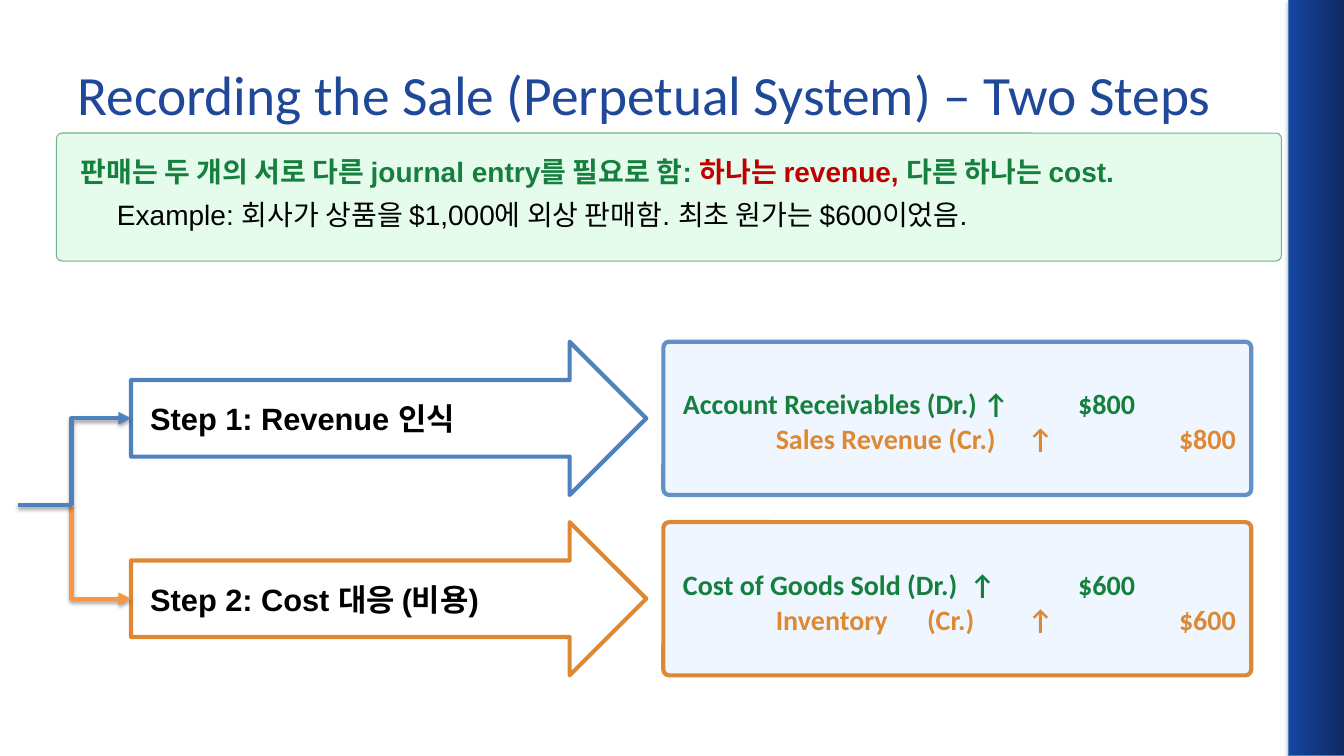
from pptx import Presentation
from pptx.dml.color import RGBColor
from pptx.enum import shapes, text
from pptx.oxml import parse_xml
from pptx.oxml import ns
from pptx.util import Inches, Pt

NAVY = RGBColor(0x0D, 0x29, 0x60)
ROYAL = RGBColor(0x16, 0x45, 0xA2)
TITLE_BLUE = RGBColor(0x1F, 0x48, 0x99)
BAND_EDGE = RGBColor(0x4B, 0x7E, 0xBC)
BLUE = RGBColor(0x4F, 0x81, 0xBD)
SOFT_BLUE = RGBColor(0x64, 0x90, 0xC5)
PALE_BLUE = RGBColor(0xEF, 0xF6, 0xFF)
ORANGE = RGBColor(0xDD, 0x89, 0x33)
BRIGHT_ORANGE = RGBColor(0xF7, 0x96, 0x46)
GREEN = RGBColor(0x15, 0x80, 0x3D)
MINT = RGBColor(0xE5, 0xFC, 0xED)
MINT_EDGE = RGBColor(0x6D, 0xB5, 0x87)
RED = RGBColor(0xC0, 0x00, 0x00)
BLACK = RGBColor(0, 0, 0)
WHITE = RGBColor(0xFF, 0xFF, 0xFF)

PRESET = shapes.MSO_SHAPE
LINK = shapes.MSO_CONNECTOR
STEP_HEIGHT = 1.52
FORK_X, FORK_Y = 0.71, 5.01
STEP_X = 1.3


def add_shadow(element, opacity):
    element.spPr.append(parse_xml(
        f'<a:effectLst {ns.nsdecls("a")}>'
        '<a:outerShdw blurRad="39400" dist="22900" dir="5400000" rotWithShape="0">'
        f'<a:srgbClr val="000000"><a:alpha val="{opacity * 1000}"/></a:srgbClr>'
        '</a:outerShdw></a:effectLst>'))


def add_run(paragraph, wording, size, color, font="Arial", bold=False):
    run = paragraph.add_run()
    run.text = wording
    run.font.size = Pt(size)
    run.font.name = font
    run.font.bold = bold
    run.font.color.rgb = color


def set_tabs(paragraph, stops):
    tabs = "".join(f'<a:tab pos="{Inches(stop)}" algn="l"/>' for stop in stops)
    paragraph._p.get_or_add_pPr().append(
        parse_xml(f'<a:tabLst {ns.nsdecls("a")}>{tabs}</a:tabLst>'))


def add_panel(slide, preset, left, top, width, height, fill, edge, weight, corner=None):
    panel = slide.shapes.add_shape(
        preset, Inches(left), Inches(top), Inches(width), Inches(height))
    panel.shadow.inherit = False
    panel.fill.solid()
    panel.fill.fore_color.rgb = fill
    panel.line.color.rgb = edge
    panel.line.width = Pt(weight)
    if corner is not None:
        panel.adjustments[0] = corner
    panel.text_frame.vertical_anchor = text.MSO_ANCHOR.MIDDLE
    panel.text_frame.paragraphs[0].alignment = text.PP_ALIGN.LEFT
    return panel


def add_side_band(slide):
    band = slide.shapes.add_shape(
        PRESET.RECTANGLE, Inches(12.78), 0, Inches(0.56), Inches(7.5))
    band.fill.gradient()
    band.fill.gradient_angle = 180
    for stop, color, position in zip(band.fill.gradient_stops, (NAVY, ROYAL), (0, 1)):
        stop.color.rgb = color
        stop.position = position
    band.line.color.rgb = BAND_EDGE
    band.line.width = Pt(0.75)
    add_shadow(band._element, 35)


def add_text_area(slide, left, top, width, height):
    area = slide.shapes.add_textbox(
        Inches(left), Inches(top), Inches(width), Inches(height)).text_frame
    area.word_wrap = True
    return area


def add_title(slide, wording):
    title = add_text_area(slide, 0.67, 0.3, 12, 1.25)
    title.vertical_anchor = text.MSO_ANCHOR.MIDDLE
    add_run(title.paragraphs[0], wording, 39.6, TITLE_BLUE, "Calibri")


def add_summary(slide):
    add_panel(slide, PRESET.ROUNDED_RECTANGLE, 0.56, 1.32, 12.15, 1.27,
              MINT, MINT_EDGE, 0.75, 0.044)
    summary = add_text_area(slide, 0.66, 1.56, 11.85, 1.01)
    summary.margin_left = summary.margin_right = 0
    summary.margin_top = summary.margin_bottom = 0
    rule, example = summary.paragraphs[0], summary.add_paragraph()
    for paragraph, indent in ((rule, 0.14), (example, 0.5)):
        paragraph.line_spacing = Pt(22.4)
        paragraph.space_after = Pt(8)
        paragraph._p.get_or_add_pPr().set("marL", str(Inches(indent)))
    add_run(rule, "판매는 두 개의 서로 다른 journal entry를 필요로 함: ", 20, GREEN, bold=True)
    add_run(rule, "하나는 revenue, ", 20, RED, bold=True)
    add_run(rule, "다른 하나는 cost.", 20, GREEN, bold=True)
    add_run(example, "Example: 회사가 상품을 $1,000에 외상 판매함. 최초 원가는 $600이었음.", 20, BLACK)


def add_step(slide, top, wording, edge):
    step = add_panel(slide, PRESET.RIGHT_ARROW, STEP_X, top, 5.11, STEP_HEIGHT,
                     WHITE, edge, 3)
    step.text_frame.margin_left = Inches(0.19)
    add_run(step.text_frame.paragraphs[0], wording, 22, BLACK, bold=True)


def add_entry(slide, top, debit_account, credit_account, amount, edge):
    entry = add_panel(slide, PRESET.ROUNDED_RECTANGLE, 6.58, top, 5.83, STEP_HEIGHT,
                      PALE_BLUE, edge, 3, 0.037).text_frame
    debit, credit = entry.paragraphs[0], entry.add_paragraph()
    credit.alignment = text.PP_ALIGN.LEFT
    set_tabs(debit, (0.08, 4))
    set_tabs(credit, (1, 2.5, 3.5, 5))
    add_run(debit, "\t", 24, BLACK, "Calibri")
    add_run(debit, f"{debit_account}↑\t{amount}", 20, GREEN, "Calibri", True)
    add_run(credit, f"\t{credit_account}\t↑\t{amount}", 20, ORANGE, "Calibri", True)


def add_link(slide, kind, start, end, color):
    link = slide.shapes.add_connector(kind, *(Inches(value) for value in start + end))
    link.line.color.rgb = color
    link.line.width = Pt(3)
    add_shadow(link._element, 38)
    return link


def add_branch(slide, end_y, color):
    branch = add_link(slide, LINK.ELBOW, (FORK_X, FORK_Y), (STEP_X, end_y), color)
    properties = branch._element.spPr
    properties.find(ns.qn("a:ln")).append(
        parse_xml(f'<a:tailEnd {ns.nsdecls("a")} type="triangle"/>'))
    properties.find(ns.qn("a:prstGeom")).get_or_add_avLst().append(
        parse_xml(f'<a:gd {ns.nsdecls("a")} name="adj1" fmla="val 0"/>'))


def main():
    deck = Presentation()
    deck.slide_width, deck.slide_height = Inches(13.33), Inches(7.5)
    slide = deck.slides.add_slide(deck.slide_layouts[6])

    add_side_band(slide)
    add_title(slide, "Recording the Sale (Perpetual System) – Two Steps")
    add_summary(slide)

    steps = (
        (3.39, "Step 1: Revenue 인식", BLUE, SOFT_BLUE, BLUE,
         "Account Receivables (Dr.) ", "Sales Revenue (Cr.)", "$800"),
        (5.18, "Step 2: Cost 대응 (비용)", ORANGE, ORANGE, BRIGHT_ORANGE,
         "Cost of Goods Sold (Dr.)  ", "Inventory\t(Cr.)", "$600"),
    )
    for top, wording, step_edge, entry_edge, branch_color, debit, credit, amount in steps:
        add_step(slide, top, wording, step_edge)
        add_entry(slide, top, debit, credit, amount, entry_edge)
        add_branch(slide, top + STEP_HEIGHT / 2, branch_color)
    add_link(slide, LINK.STRAIGHT, (0.18, FORK_Y), (FORK_X, FORK_Y), BLUE)

    deck.save("out.pptx")


if __name__ == "__main__":
    main()
